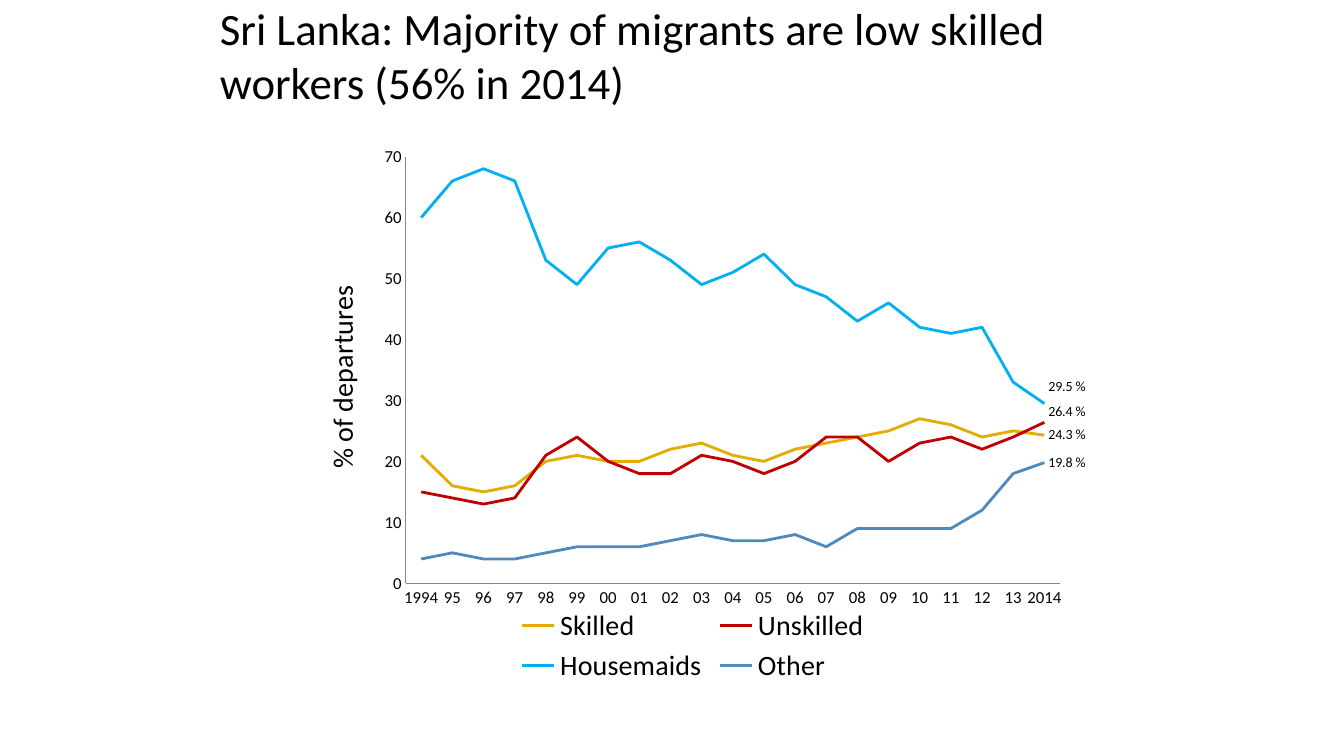
"""Build the slide on skill levels of Sri Lankan migrants."""
from pptx import Presentation
from pptx.chart.data import CategoryChartData
from pptx.dml.color import RGBColor
from pptx.enum.chart import (XL_CHART_TYPE, XL_LABEL_POSITION,
                             XL_LEGEND_POSITION, XL_MARKER_STYLE, XL_TICK_MARK)
from pptx.enum.text import MSO_ANCHOR
from pptx.oxml import parse_xml
from pptx.oxml.ns import nsdecls
from pptx.util import Pt

LINE = XL_CHART_TYPE.LINE
RIGHT = XL_LABEL_POSITION.RIGHT
BOTTOM = XL_LEGEND_POSITION.BOTTOM
NO_MARKER = XL_MARKER_STYLE.NONE
NO_TICK = XL_TICK_MARK.NONE
MIDDLE = MSO_ANCHOR.MIDDLE

BLACK = RGBColor(0x00, 0x00, 0x00)
GREY = RGBColor(0x86, 0x86, 0x86)
GOLD = RGBColor(0xE2, 0xAC, 0x00)
RED = RGBColor(0xC0, 0x00, 0x00)
SKY = RGBColor(0x00, 0xB0, 0xF0)
BLUE = RGBColor(0x50, 0x89, 0xBC)
FONT = "Calibri"

YEARS = ["1994", *(f"{y % 100:02d}" for y in range(1995, 2014)), "2014"]
SERIES = [
    ("Skilled", GOLD, 0, [21, 16, 15, 16, 20, 21, 20, 20, 22, 23, 21,
                          20, 22, 23, 24, 25, 27, 26, 24, 25, 24.3]),
    ("Unskilled", RED, -0.02, [15, 14, 13, 14, 21, 24, 20, 18, 18, 21, 20,
                               18, 20, 24, 24, 20, 23, 24, 22, 24, 26.4]),
    ("Housemaids", SKY, -0.03, [60, 66, 68, 66, 53, 49, 55, 56, 53, 49, 51,
                                54, 49, 47, 43, 46, 42, 41, 42, 33, 29.5]),
    ("Other", BLUE, 0, [4, 5, 4, 4, 5, 6, 6, 6, 7, 8, 7,
                        7, 8, 6, 9, 9, 9, 9, 12, 18, 19.8]),
]


def set_font(font, size):
    """Apply the slide's font at a given size."""
    font.name, font.size, font.bold = FONT, Pt(size), False
    font.color.rgb = BLACK


def layout_xml(target, **values):
    """Return a manual layout element."""
    inner = '<c:layoutTarget val="inner"/>' if target else ""
    modes = '<c:xMode val="edge"/><c:yMode val="edge"/>' if target else ""
    sizes = "".join(f'<c:{k} val="{v}"/>' for k, v in values.items())
    return parse_xml(f'<c:layout {nsdecls("c")}><c:manualLayout>{inner}{modes}'
                     f'{sizes}</c:manualLayout></c:layout>')


def add_title(s, text):
    """Add the slide title."""
    sp = s.shapes.add_textbox(Pt(150), Pt(0), Pt(648), Pt(78))
    tf = sp.text_frame
    tf.word_wrap = True
    tf.vertical_anchor = MIDDLE
    r = tf.paragraphs[0].add_run()
    r.text = text
    set_font(r.font, 32)


def style_axis(axis):
    """Style one axis."""
    axis.has_major_gridlines = False
    axis.major_tick_mark = axis.minor_tick_mark = NO_TICK
    axis.format.line.color.rgb = GREY
    axis.format.line.width = Pt(0.75)
    set_font(axis.tick_labels.font, 12)


def style_series(series, color, shift):
    """Style one line and label its last point, moved vertically by shift."""
    series.smooth = False
    series.marker.style = NO_MARKER
    series.format.line.color.rgb = color
    series.format.line.width = Pt(2)
    label = series.points[len(YEARS) - 1].data_label
    set_font(label.font, 10)
    label.position = RIGHT
    idx = series._element.xpath("c:dLbls/c:dLbl/c:idx")[0]
    idx.addnext(parse_xml(f'<c:numFmt {nsdecls("c")} sourceLinked="0" '
                          'formatCode="0.0&quot; %&quot;"/>'))
    if shift:
        idx.addnext(layout_xml(False, x=0, y=shift))


def add_departures_chart(s):
    """Add the line chart of departures by skill level."""
    data = CategoryChartData()
    data.categories = YEARS
    for name, _, _, values in SERIES:
        data.add_series(name, values)
    chart = s.shapes.add_chart(LINE, Pt(210), Pt(96), Pt(570), Pt(396), data).chart
    set_font(chart.font, 10)
    chart.has_title = False
    chart.has_legend = True
    chart.legend.position = BOTTOM
    chart.legend.include_in_layout = False
    set_font(chart.legend.font, 20)
    plot = chart.plots[0]
    plot.vary_by_categories = False
    for series, (_, color, shift, _) in zip(plot.series, SERIES):
        style_series(series, color, shift)
    style_axis(chart.category_axis)
    axis = chart.value_axis
    style_axis(axis)
    axis.minimum_scale, axis.maximum_scale, axis.major_unit = 0, 70, 10
    r = axis.axis_title.text_frame.paragraphs[0].add_run()
    r.text = "% of departures"
    set_font(r.font, 20)
    area = chart._chartSpace.xpath("c:chart/c:plotArea")[0]
    for old in area.xpath("c:layout"):
        area.remove(old)
    area.insert(0, layout_xml(True, x=0.14, y=0.04, w=0.82, h=0.77))


def main():
    """Build and save the slide."""
    prs = Presentation()
    prs.slide_width, prs.slide_height = Pt(960), Pt(540)
    s = prs.slides.add_slide(prs.slide_layouts[6])
    add_title(s, "Sri Lanka: Majority of migrants are low skilled workers (56% in 2014)")
    add_departures_chart(s)
    prs.save("out.pptx")


if __name__ == "__main__":
    main()
